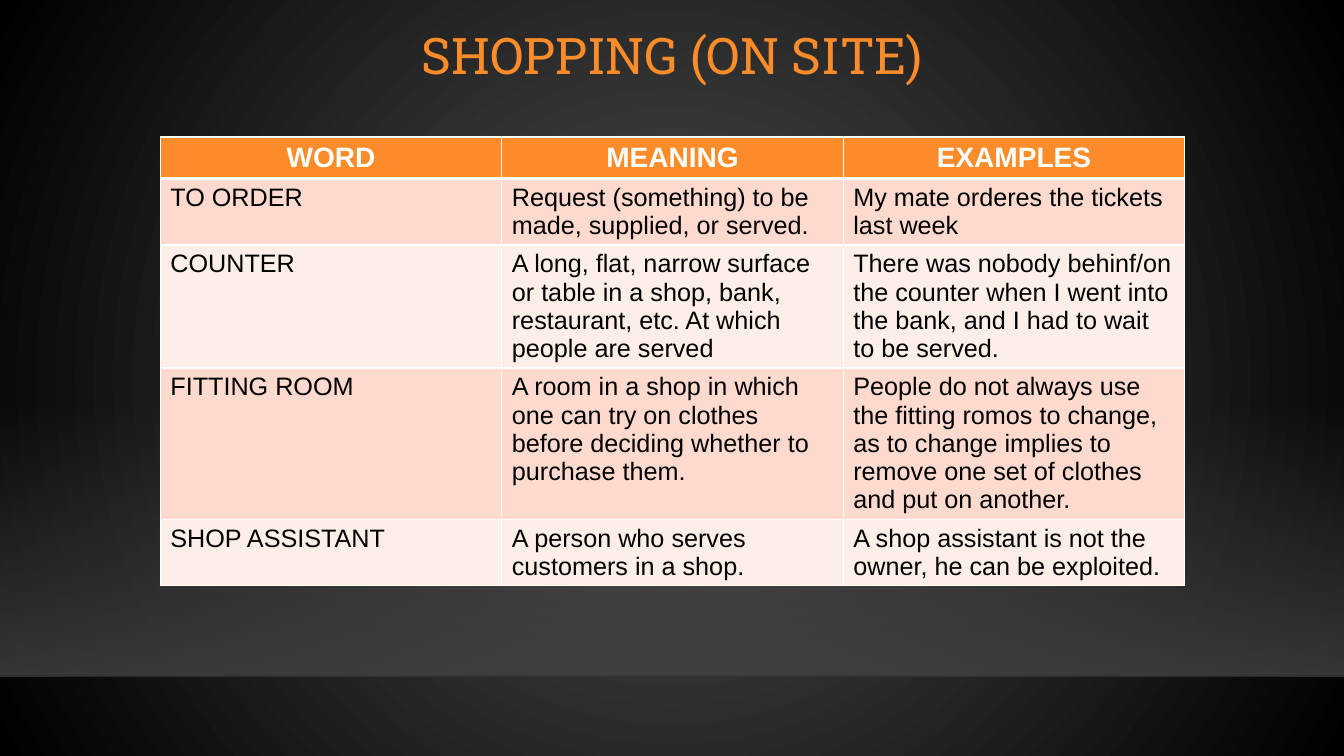
from pptx import Presentation
from pptx.dml.color import RGBColor
from pptx.enum.shapes import MSO_SHAPE as Shape, MSO_CONNECTOR as Link
from pptx.enum.text import PP_ALIGN as Align, MSO_ANCHOR as Anchor, MSO_AUTO_SIZE as Fit
from pptx.oxml import parse_xml
from pptx.oxml.ns import qn, nsdecls
from pptx.oxml.xmlchemy import OxmlElement as Node
from pptx.util import Inches, Pt

HEAD = "SHOPPING (ON SITE)"
ROWS = [
    ("WORD", "MEANING", "EXAMPLES"),
    ("TO ORDER",
     "Request (something) to be made, supplied, or served.",
     "My mate orderes the tickets last week"),
    ("COUNTER",
     "A long, flat, narrow surface or table in a shop, bank, restaurant, etc. "
     "At which people are served",
     "There was nobody behinf/on the counter when I went into the bank, "
     "and I had to wait to be served."),
    ("FITTING ROOM",
     "A room in a shop in which one can try on clothes before deciding "
     "whether to purchase them.",
     "People do not always use the fitting romos to change, as to change "
     "implies to remove one set of clothes and put on another."),
    ("SHOP ASSISTANT",
     "A person who serves customers in a shop.",
     "A shop assistant is not the owner, he can be exploited."),
]

ORANGE = RGBColor(0xFB, 0x8C, 0x29)
PEACH = RGBColor(0xFD, 0xDA, 0xCD)
CREAM = RGBColor(0xFE, 0xEE, 0xE8)
WHITE = RGBColor(0xFF, 0xFF, 0xFF)
BLACK = RGBColor(0, 0, 0)
INK = RGBColor(0, 0, 1)
GREY = RGBColor(0x50, 0x50, 0x50)
SLATE = RGBColor(0x45, 0x45, 0x45)

WIDE, HIGH = Inches(13.33), Inches(7.5)
LEFT, SPAN = Inches(1.59), Inches(10.16)
FLOOR, RISE = Inches(6.71), Inches(2.74)
TOP, STEP = Inches(1.36), Inches(0.41)


def fade(color, share):
    alpha = Node("a:alpha")
    alpha.set("val", str(share * 1000))
    color.append(alpha)


def blend(fill, root, tones):
    fill.gradient()
    for stop, tone in zip(fill.gradient_stops, tones):
        stop.color.rgb = tone
    return next(root.iter(qn("a:gradFill")))


def write(para, text, size, font, color, bold=False):
    run = para.add_run()
    run.text = text
    run.font.size = Pt(size)
    run.font.name = font
    run.font.bold = bold
    run.font.color.rgb = color


def edge(cell, base):
    props = cell._tc.get_or_add_tcPr()
    sides = {"L": 1, "R": 1, "T": 1, "B": base}
    for spot, (side, width) in enumerate(sides.items()):
        props.insert(spot, parse_xml(
            f'<a:ln{side} {nsdecls("a")} w="{Pt(width)}"><a:solidFill>'
            f'<a:srgbClr val="{WHITE}"/></a:solidFill></a:ln{side}>'))


def stage(slide):
    grad = blend(slide.background.fill, slide.element, (GREY, BLACK))
    grad.remove(grad.find(qn("a:lin")))
    grad.append(parse_xml(
        f'<a:path {nsdecls("a")} path="circle">'
        '<a:fillToRect l="50000" t="50000" r="50000" b="50000"/></a:path>'))

    band = slide.shapes.add_shape(Shape.RECTANGLE, 0, FLOOR - RISE, WIDE, RISE)
    band.shadow.inherit = False
    band.line.fill.background()
    grad = blend(band.fill, band._element, (SLATE, SLATE))
    grad.find(qn("a:lin")).set("ang", "5400000")
    for color, share in zip(grad.iter(qn("a:srgbClr")), (0, 80)):
        fade(color, share)

    rim = slide.shapes.add_connector(Link.STRAIGHT, 0, FLOOR, WIDE, FLOOR)
    rim.line.width = Pt(1)
    rim.line.color.rgb = INK
    fade(next(rim._element.iter(qn("a:srgbClr"))), 20)
    rim._element.spPr.append(Node("a:effectLst"))


def title(slide):
    box = slide.shapes.title
    slide.shapes._spTree.append(box._element)
    box.left, box.top, box.width, box.height = LEFT, 0, SPAN, Inches(1.15)
    frame = box.text_frame
    frame.word_wrap = True
    frame.auto_size = Fit.NONE
    frame.vertical_anchor = Anchor.MIDDLE
    para = frame.paragraphs[0]
    para.alignment = Align.CENTER
    para.line_spacing = 0.9
    write(para, HEAD, 36, "Roboto Slab", ORANGE)


def grid(slide):
    count = len(ROWS)
    table = slide.shapes.add_table(
        count, len(ROWS[0]), LEFT, TOP, SPAN, STEP * count).table
    for row, words in enumerate(ROWS):
        top = row == 0
        for col, text in enumerate(words):
            cell = table.cell(row, col)
            cell.fill.solid()
            cell.fill.fore_color.rgb = ORANGE if top else PEACH if row % 2 else CREAM
            edge(cell, 3 if top else 1)
            para = cell.text_frame.paragraphs[0]
            para.alignment = Align.CENTER if top else Align.LEFT
            write(para, text, 20 if top else 18, "Arial", WHITE if top else BLACK, top)


def main():
    deck = Presentation()
    deck.slide_width, deck.slide_height = WIDE, HIGH
    slide = deck.slides.add_slide(deck.slide_layouts[5])
    stage(slide)
    title(slide)
    grid(slide)
    deck.save("out.pptx")


if __name__ == "__main__":
    main()
